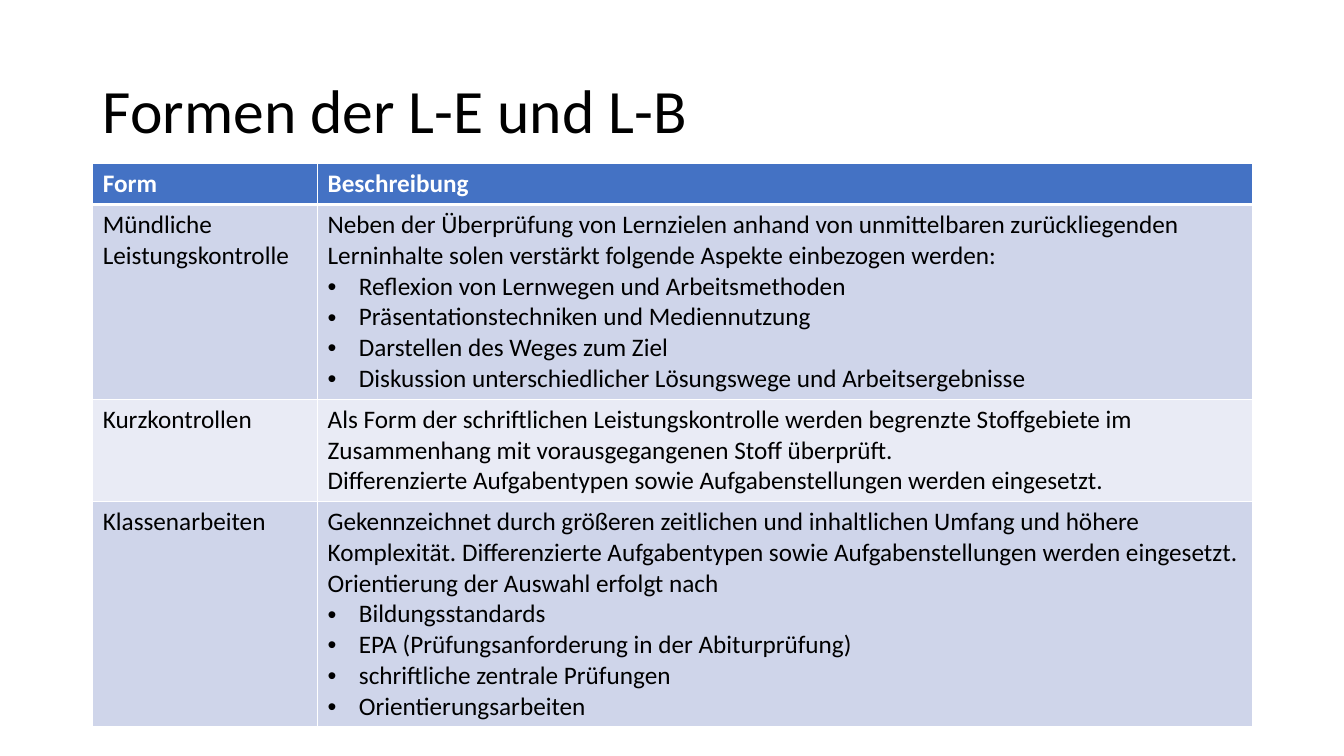
from dataclasses import dataclass

from lxml import etree
from pptx import Presentation
from pptx.dml.color import RGBColor
from pptx.enum.text import MSO_ANCHOR, PP_ALIGN
from pptx.oxml.ns import qn
from pptx.util import Inches, Pt

LEFT = PP_ALIGN.LEFT
MIDDLE = MSO_ANCHOR.MIDDLE
BULLET = "• "


@dataclass(frozen=True)
class Theme:
    font: str = "Calibri"
    title_size: float = 44
    table_size: float = 18
    text: str = "000000"
    light: str = "FFFFFF"
    header: str = "4472C4"
    bands: tuple = ("CFD5EA", "E9EBF5")
    rule: float = 1
    header_rule: float = 3
    bullet_indent: float = 0.31


HEADINGS = ("Form", "Beschreibung")
FORMS = [
    ("Mündliche Leistungskontrolle", [
        "Neben der Überprüfung von Lernzielen anhand von unmittelbaren zurückliegenden "
        "Lerninhalte solen verstärkt folgende Aspekte einbezogen werden:",
        "• Reflexion von Lernwegen und Arbeitsmethoden",
        "• Präsentationstechniken und Mediennutzung",
        "• Darstellen des Weges zum Ziel",
        "• Diskussion unterschiedlicher Lösungswege und Arbeitsergebnisse",
    ]),
    ("Kurzkontrollen", [
        "Als Form der schriftlichen Leistungskontrolle werden begrenzte Stoffgebiete im "
        "Zusammenhang mit vorausgegangenen Stoff überprüft.",
        "Differenzierte Aufgabentypen sowie Aufgabenstellungen werden eingesetzt.",
    ]),
    ("Klassenarbeiten", [
        "Gekennzeichnet durch größeren zeitlichen und inhaltlichen Umfang und höhere "
        "Komplexität. Differenzierte Aufgabentypen sowie Aufgabenstellungen werden "
        "eingesetzt. Orientierung der Auswahl erfolgt nach",
        "• Bildungsstandards",
        "• EPA (Prüfungsanforderung in der Abiturprüfung)",
        "• schriftliche zentrale Prüfungen",
        "• Orientierungsarbeiten",
    ]),
]
COLUMN_WIDTHS = (2.23, 9.27)
ROW_HEIGHTS = (0.41, 1.9, 1, 2.2)


class SlideBuilder:
    def __init__(self, slide, theme):
        self.slide = slide
        self.theme = theme

    def apply(self, target, values):
        for key, value in values.items():
            setattr(target, key, value)

    def add_words(self, paragraph, words, size, color, bold=False):
        run = paragraph.add_run()
        run.text = words
        self.apply(run.font, {"name": self.theme.font, "size": Pt(size), "bold": bold})
        run.font.color.rgb = RGBColor.from_string(color)

    def title(self, words, left, top, width, height):
        heading = self.slide.shapes.title
        self.apply(heading, {"left": Inches(left), "top": Inches(top),
                             "width": Inches(width), "height": Inches(height)})
        heading.text_frame.vertical_anchor = MIDDLE
        line = heading.text_frame.paragraphs[0]
        self.apply(line, {"alignment": LEFT, "line_spacing": 0.9})
        self.add_words(line, words, self.theme.title_size, self.theme.text)

    def bullet(self, paragraph):
        indent = Inches(self.theme.bullet_indent)
        properties = paragraph._p.get_or_add_pPr()
        properties.set("marL", str(indent))
        properties.set("indent", str(-indent))
        etree.SubElement(properties, qn("a:buFont"), typeface="Arial")
        etree.SubElement(properties, qn("a:buChar"), char=BULLET.strip())

    def borders(self, cell, top, bottom):
        rule = self.theme.rule
        widths = {"a:lnL": rule, "a:lnR": rule, "a:lnT": top, "a:lnB": bottom}
        properties = cell._tc.get_or_add_tcPr()
        for position, (side, width) in enumerate(widths.items()):
            edge = etree.Element(qn(side), w=str(Pt(width)))
            fill = etree.SubElement(edge, qn("a:solidFill"))
            etree.SubElement(fill, qn("a:srgbClr"), val=self.theme.light)
            properties.insert(position, edge)

    def cell(self, cell, lines, row):
        theme = self.theme
        is_header = row == 0
        background = theme.header if is_header else theme.bands[(row - 1) % 2]
        color = theme.light if is_header else theme.text
        cell.fill.solid()
        cell.fill.fore_color.rgb = RGBColor.from_string(background)
        self.borders(cell, theme.header_rule if row == 1 else theme.rule,
                     theme.header_rule if is_header else theme.rule)
        frame = cell.text_frame
        for number, line in enumerate(lines):
            paragraph = frame.add_paragraph() if number else frame.paragraphs[0]
            if line.startswith(BULLET):
                self.bullet(paragraph)
            self.add_words(paragraph, line.removeprefix(BULLET), theme.table_size, color, is_header)

    def table(self, rows, left, top, widths, heights):
        table = self.slide.shapes.add_table(
            len(rows), len(widths), Inches(left), Inches(top),
            Inches(sum(widths)), Inches(sum(heights))).table
        for column, width in zip(table.columns, widths):
            column.width = Inches(width)
        for index, (row, height) in enumerate(zip(rows, heights)):
            table.rows[index].height = Inches(height)
            for column, lines in enumerate(row):
                self.cell(table.cell(index, column), lines, index)


def main():
    presentation = Presentation()
    presentation.slide_width = Inches(13.33)
    presentation.slide_height = Inches(7.5)
    slide = presentation.slides.add_slide(presentation.slide_layouts[5])
    builder = SlideBuilder(slide, Theme())
    builder.title("Formen der L-E und L-B", 0.92, 0.4, 11.5, 1.45)
    rows = [[[heading] for heading in HEADINGS]]
    rows += [[[form], description] for form, description in FORMS]
    builder.table(rows, 0.92, 1.62, COLUMN_WIDTHS, ROW_HEIGHTS)
    presentation.save("out.pptx")


if __name__ == "__main__":
    main()
